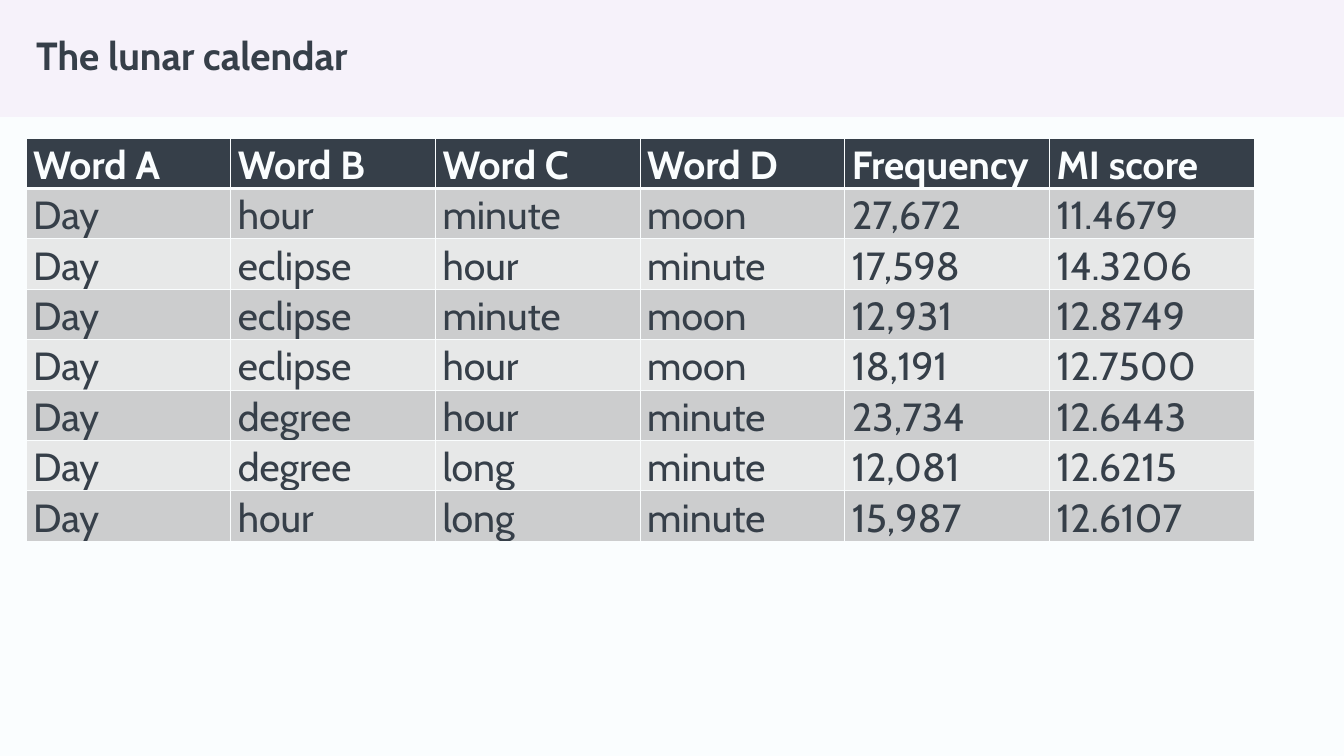
from lxml import etree
from pptx import Presentation
from pptx.dml.color import RGBColor
from pptx.enum.shapes import MSO_SHAPE
from pptx.enum.text import MSO_ANCHOR
from pptx.oxml.ns import qn
from pptx.util import Inches, Pt

RECT = MSO_SHAPE.RECTANGLE
MIDDLE = MSO_ANCHOR.MIDDLE
PALE = RGBColor(0xFA, 0xFD, 0xFE)
LILAC = RGBColor(0xF6, 0xF2, 0xFA)
SLATE = RGBColor(0x36, 0x3F, 0x49)
BANDS = RGBColor(0xE7, 0xE8, 0xE8), RGBColor(0xCC, 0xCD, 0xCE)

LEFT, COL_W, ROW_H = 0.26, 2.03, 0.41
ROWS = [
    ("Word A", "Word B", "Word C", "Word D", "Frequency", "MI score"),
    ("Day", "hour", "minute", "moon", "27,672", "11.4679"),
    ("Day", "eclipse", "hour", "minute", "17,598", "14.3206"),
    ("Day", "eclipse", "minute", "moon", "12,931", "12.8749"),
    ("Day", "eclipse", "hour", "moon", "18,191", "12.7500"),
    ("Day", "degree", "hour", "minute", "23,734", "12.6443"),
    ("Day", "degree", "long", "minute", "12,081", "12.6215"),
    ("Day", "hour", "long", "minute", "15,987", "12.6107"),
]


def write(tf, text, color, bold, spacing):
    p = tf.paragraphs[0]
    p.line_spacing = spacing
    r = p.add_run()
    r.text = text
    r.font.color.rgb = color
    for name, value in {"name": "Cabin", "size": Pt(28), "bold": bold}.items():
        setattr(r.font, name, value)


def add_border(cell, side, width):
    ln = etree.SubElement(cell._tc.get_or_add_tcPr(), qn(f"a:ln{side}"), w=str(Pt(width)))
    fill = etree.SubElement(ln, qn("a:solidFill"))
    etree.SubElement(fill, qn("a:srgbClr"), val=str(PALE))


prs = Presentation()
prs.slide_width, prs.slide_height = Inches(13.33), Inches(7.5)
s = prs.slides.add_slide(prs.slide_layouts[6])
s.background.fill.solid()
s.background.fill.fore_color.rgb = PALE

sp = s.shapes.add_shape(RECT, 0, Inches(-0.01), prs.slide_width, Inches(1.17))
sp.shadow.inherit = False
sp.fill.solid()
sp.fill.fore_color.rgb = LILAC
sp.line.fill.background()

title = s.shapes.add_textbox(Inches(LEFT), Inches(0.26), Inches(12.15), Inches(0.62))
tf = title.text_frame
tf.word_wrap = True
tf.vertical_anchor = MIDDLE
write(tf, "The lunar calendar", SLATE, True, 0.9)

table = s.shapes.add_table(
    len(ROWS), len(ROWS[0]), Inches(LEFT), Inches(1.37),
    Inches(COL_W * len(ROWS[0])), Inches(ROW_H * len(ROWS)),
).table
for col in table.columns:
    col.width = Inches(COL_W)

margins = {"margin_left": 0.07, "margin_right": 0.07, "margin_top": 0, "margin_bottom": 0}
for i, words in enumerate(ROWS):
    table.rows[i].height = Inches(ROW_H)
    header = i == 0
    for j, word in enumerate(words):
        cell = table.cell(i, j)
        for name, value in margins.items():
            setattr(cell, name, Inches(value))
        borders = {"L": 1, "R": 1, "T": 3 if i == 1 else 1, "B": 3 if header else 1}
        for side, width in borders.items():
            add_border(cell, side, width)
        cell.fill.solid()
        cell.fill.fore_color.rgb = SLATE if header else BANDS[i % 2]
        write(cell.text_frame, word, PALE if header else SLATE, header, 1.07)

prs.save("out.pptx")
